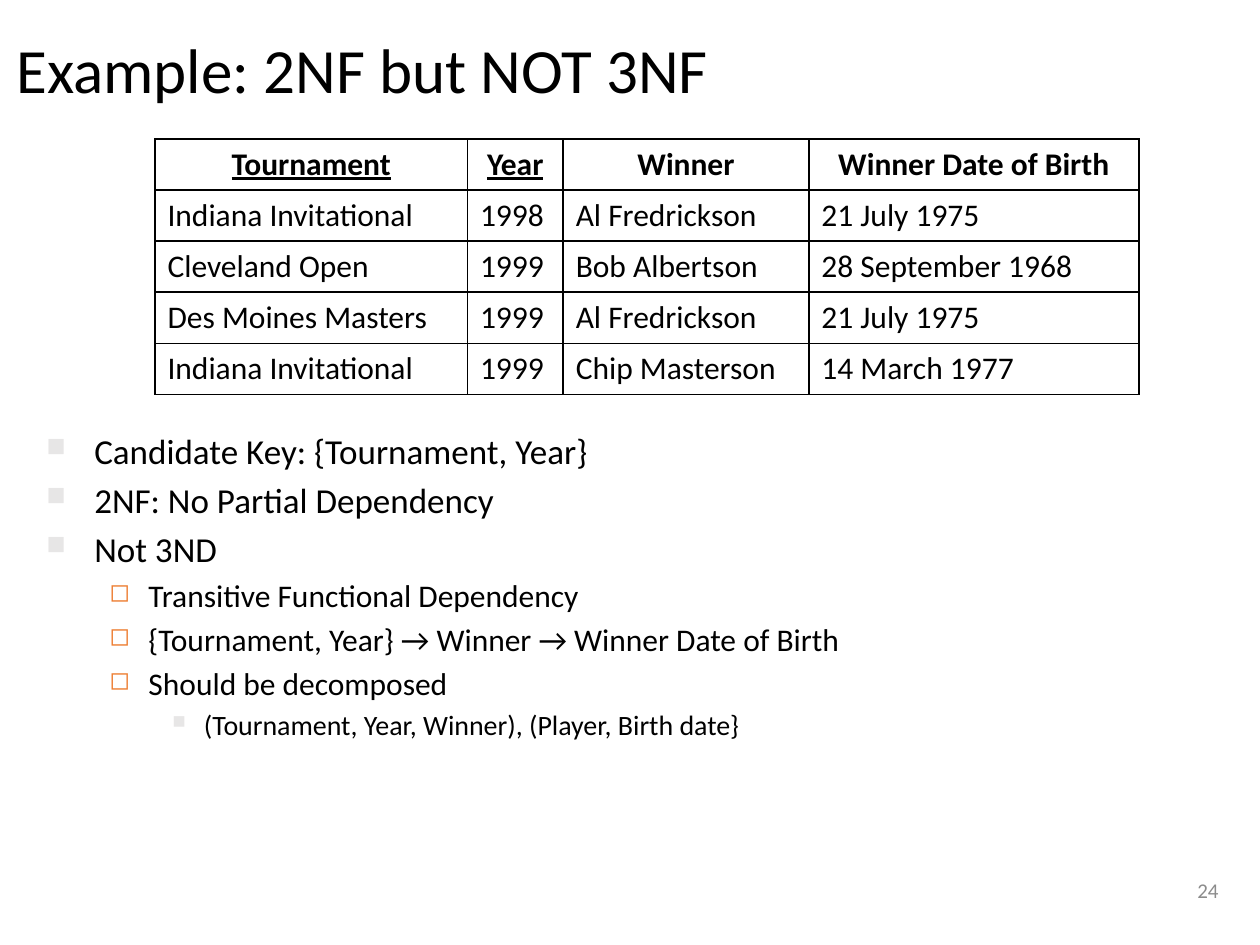
import pptx
import pptx.util
import pptx.dml.color
import pptx.enum.text
import pptx.oxml.ns
from dataclasses import dataclass
from lxml import etree

WIDTH, HEIGHT = 10, 7.5
FONT = "Calibri"
COLORS = {"ink": "000000", "number": "8C8C8C", "pale": "E7E6E6", "orange": "ED7D31"}
ALIGN = pptx.enum.text.PP_ALIGN
ANCHOR = pptx.enum.text.MSO_ANCHOR


@dataclass
class Area:
    """A rectangle in shares of the slide's size."""
    left: float
    top: float
    width: float
    height: float

    def lengths(self) -> dict:
        shares = {"left": self.left * WIDTH, "top": self.top * HEIGHT,
                  "width": self.width * WIDTH, "height": self.height * HEIGHT}
        return {name: pptx.util.Inches(value) for name, value in shares.items()}


@dataclass
class Level:
    size: int
    margin: float
    hanging: float
    bullet: str
    color: str
    percent: int


TITLE_AREA = Area(0.003, 0.007, 0.9, 0.14)
TABLE_AREA = Area(0.123, 0.147, 0.781, 0.27)
BODY_AREA = Area(0.027, 0.448, 0.945, 0.483)
NUMBER_AREA = Area(0.744, 0.909, 0.233, 0.067)

COLUMN_WIDTHS = [2.48, 0.76, 1.95, 2.62]
KEY_COLUMNS = 2
TABLE_INDENT = 0.38
RESULTS = [
    ["Tournament", "Year", "Winner", "Winner Date of Birth"],
    ["Indiana Invitational", "1998", "Al Fredrickson", "21 July 1975"],
    ["Cleveland Open", "1999", "Bob Albertson", "28 September 1968"],
    ["Des Moines Masters", "1999", "Al Fredrickson", "21 July 1975"],
    ["Indiana Invitational", "1999", "Chip Masterson", "14 March 1977"],
]

LEVELS = [
    Level(20, 0.38, 0.38, "■", "pale", 75),
    Level(18, 0.81, 0.31, "◻", "orange", 80),
    Level(16, 1.25, 0.25, "■", "pale", 65),
]
POINTS = [
    (0, "Candidate Key: {Tournament, Year}"),
    (0, "2NF: No Partial Dependency"),
    (0, "Not 3ND"),
    (1, "Transitive Functional Dependency"),
    (1, "{Tournament, Year} → Winner → Winner Date of Birth"),
    (1, "Should be decomposed"),
    (2, "(Tournament, Year, Winner), (Player, Birth date}"),
]


def set_all(target, values: dict) -> None:
    for name, value in values.items():
        setattr(target, name, value)


def add_element(parent, tag: str, **attributes):
    return etree.SubElement(parent, pptx.oxml.ns.qn(tag), attributes)


def write(para, text: str, size: int, color: str = "ink", **font_values) -> None:
    span = para.add_run()
    span.text = text
    set_all(span.font, {"name": FONT, "size": pptx.util.Pt(size), **font_values})
    span.font.color.rgb = pptx.dml.color.RGBColor.from_string(COLORS[color])


def indent(para, margin: float, hanging: float):
    properties = para._p.get_or_add_pPr()
    properties.set("marL", str(pptx.util.Inches(margin)))
    properties.set("indent", str(-pptx.util.Inches(hanging)))
    return properties


def add_box(page, area: Area, anchor):
    box = page.shapes.add_textbox(**area.lengths())
    set_all(box.text_frame, {"word_wrap": True, "vertical_anchor": anchor})
    return box.text_frame


def add_point(para, level_number: int, text: str) -> None:
    level = LEVELS[level_number]
    set_all(para, {"level": level_number, "space_before": pptx.util.Pt(level.size * 0.2)})
    properties = indent(para, level.margin, level.hanging)
    bullet_color = add_element(properties, "a:buClr")
    add_element(bullet_color, "a:srgbClr", val=COLORS[level.color])
    add_element(properties, "a:buSzPct", val=str(level.percent * 1000))
    add_element(properties, "a:buChar", char=level.bullet)
    write(para, text, level.size)


def add_borders(cell) -> None:
    properties = cell._tc.get_or_add_tcPr()
    for side in ("L", "R", "T", "B"):
        line = add_element(properties, f"a:ln{side}", w=str(pptx.util.Pt(1)))
        fill = add_element(line, "a:solidFill")
        add_element(fill, "a:srgbClr", val=COLORS["ink"])


def add_results(page) -> None:
    frame = page.shapes.add_table(len(RESULTS), len(COLUMN_WIDTHS), **TABLE_AREA.lengths())
    table = frame.table
    set_all(table, {"first_row": False, "horz_banding": False})
    for column, width in zip(table.columns, COLUMN_WIDTHS):
        column.width = pptx.util.Inches(width)
    for row_number, texts in enumerate(RESULTS):
        header = row_number == 0
        for column_number, text in enumerate(texts):
            cell = table.cell(row_number, column_number)
            add_borders(cell)
            cell.fill.background()
            para = cell.text_frame.paragraphs[0]
            para.alignment = ALIGN.CENTER if header else ALIGN.LEFT
            indent(para, TABLE_INDENT, TABLE_INDENT)
            write(para, text, 18, bold=header,
                  underline=header and column_number < KEY_COLUMNS)


def main() -> None:
    deck = pptx.Presentation()
    set_all(deck, {"slide_width": pptx.util.Inches(WIDTH),
                   "slide_height": pptx.util.Inches(HEIGHT)})
    page = deck.slides.add_slide(deck.slide_layouts[5])

    # Title
    title = page.shapes.title
    set_all(title, TITLE_AREA.lengths())
    set_all(title.text_frame, {"word_wrap": True, "vertical_anchor": ANCHOR.MIDDLE})
    para = title.text_frame.paragraphs[0]
    set_all(para, {"alignment": ALIGN.LEFT, "line_spacing": 0.9})
    write(para, "Example: 2NF but NOT 3NF", 36)

    # Table of winners
    add_results(page)

    # Normal form reasoning
    body = add_box(page, BODY_AREA, ANCHOR.TOP)
    for number, (level_number, text) in enumerate(POINTS):
        para = body.add_paragraph() if number else body.paragraphs[0]
        add_point(para, level_number, text)

    # Page number
    para = add_box(page, NUMBER_AREA, ANCHOR.MIDDLE).paragraphs[0]
    para.alignment = ALIGN.RIGHT
    write(para, "24", 12, "number")

    deck.save("out.pptx")


if __name__ == "__main__":
    main()
